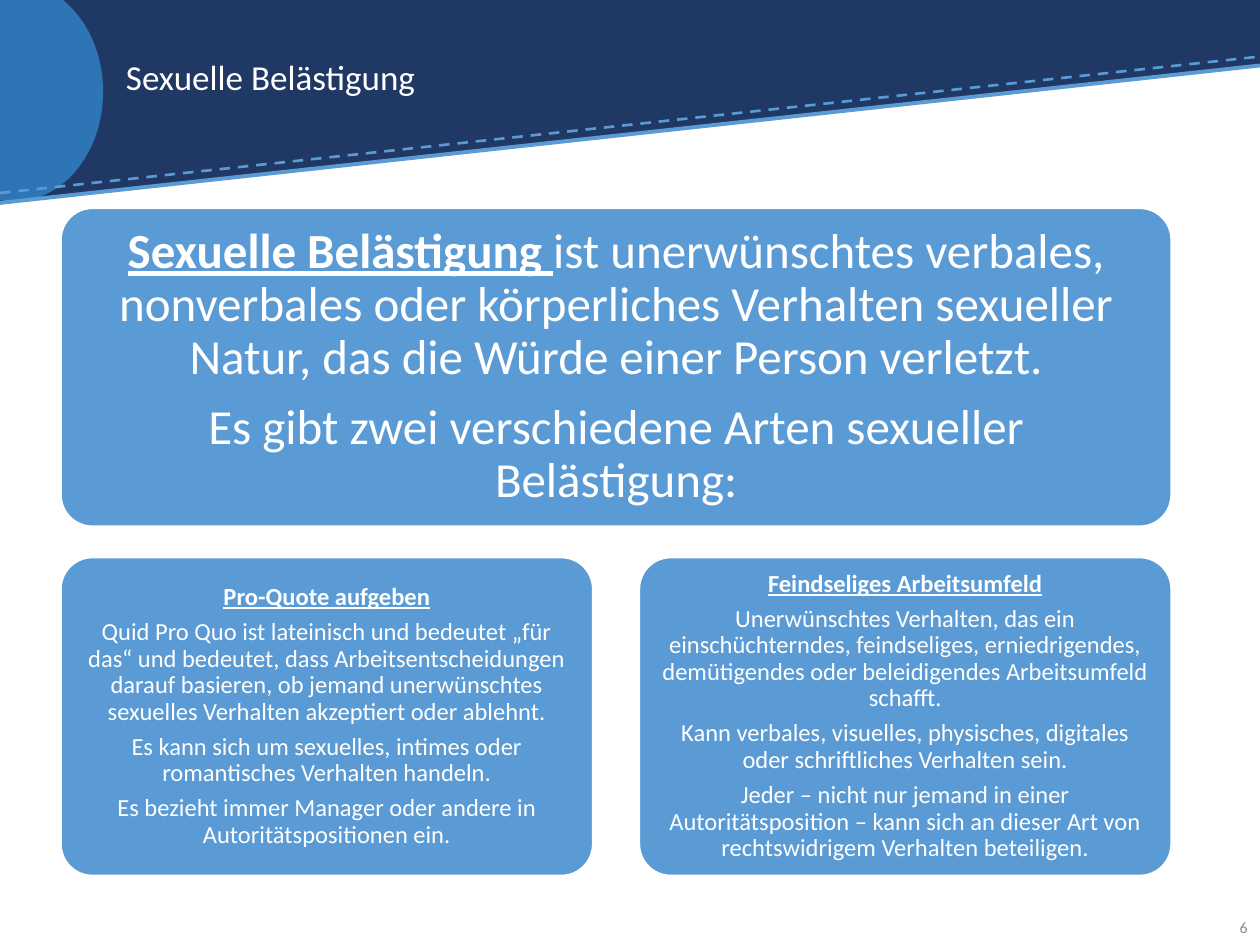
"""Build the slide on the two kinds of sexual harassment."""
from lxml import etree
from pptx import Presentation
from pptx.dml.color import RGBColor
from pptx.enum.dml import MSO_LINE
from pptx.enum.shapes import MSO_CONNECTOR, MSO_SHAPE
from pptx.enum.text import MSO_ANCHOR, PP_ALIGN
from pptx.oxml.ns import qn
from pptx.util import Cm, Pt

RECT, TRIANGLE = MSO_SHAPE.RECTANGLE, MSO_SHAPE.RIGHT_TRIANGLE
OVAL, ROUND = MSO_SHAPE.OVAL, MSO_SHAPE.ROUNDED_RECTANGLE
STRAIGHT, DASH = MSO_CONNECTOR.STRAIGHT, MSO_LINE.DASH
MIDDLE = MSO_ANCHOR.MIDDLE
LEFT, CENTER, RIGHT = PP_ALIGN.LEFT, PP_ALIGN.CENTER, PP_ALIGN.RIGHT

NAVY = RGBColor(0x20, 0x38, 0x64)
BLUE = RGBColor(0x2E, 0x75, 0xB6)
LIGHT = RGBColor(0x5B, 0x9B, 0xD5)
GREY = RGBColor(0x8C, 0x8C, 0x8C)
WHITE = RGBColor(0xFF, 0xFF, 0xFF)

TITLE = "Sexuelle Belästigung"
PAGE = "6"
HEAD = {"bold": True, "underline": True}
PLAIN = {"bold": False, "underline": False}
DEFINITION = [
    [("Sexuelle Belästigung ", HEAD),
     ("ist unerwünschtes verbales, nonverbales oder körperliches Verhalten "
      "sexueller Natur, das die Würde einer Person verletzt.", PLAIN)],
    [("Es gibt zwei verschiedene Arten sexueller Belästigung:", PLAIN)],
]
KINDS = [
    [[("Pro-Quote aufgeben", HEAD)],
     [("Quid Pro Quo ist lateinisch und bedeutet „für das“ und bedeutet, dass "
       "Arbeitsentscheidungen darauf basieren, ob jemand unerwünschtes sexuelles "
       "Verhalten akzeptiert oder ablehnt.", PLAIN)],
     [("Es kann sich um sexuelles, intimes oder romantisches Verhalten handeln.", PLAIN)],
     [("Es bezieht immer Manager oder andere in Autoritätspositionen ein.", PLAIN)]],
    [[("Feindseliges Arbeitsumfeld", HEAD)],
     [("Unerwünschtes Verhalten, das ein einschüchterndes, feindseliges, "
       "erniedrigendes, demütigendes oder beleidigendes Arbeitsumfeld schafft.", PLAIN)],
     [("Kann verbales, visuelles, physisches, digitales oder schriftliches "
       "Verhalten sein.", PLAIN)],
     [("Jeder – nicht nur jemand in einer Autoritätsposition – kann sich an dieser "
       "Art von rechtswidrigem Verhalten beteiligen.", PLAIN)]],
]

WIDTH, HEIGHT = 25.4, 19.05
BAND = [
    (RECT, (0, 0, WIDTH, 1.32), NAVY),
    (TRIANGLE, (0, 1.3, WIDTH, 2.77), NAVY),
    (OVAL, (-1.5, -0.36, 3.58, 4.42), BLUE),
]
EDGES = [(3.89, 1.14, {"width": Pt(1.5), "dash_style": DASH}),
         (4.09, 1.32, {"width": Pt(2.25)})]
CARD_LEFT, CARD_WIDTH, CARD_HEIGHT = 1.22, 22.4, 6.43
TOP_ROW, KIND_ROW, GAP = 4.19, 11.23, 0.92


def apply(obj, values):
    for name, value in values.items():
        setattr(obj, name, value)


def add_filled(slide, kind, box, color):
    sp = slide.shapes.add_shape(kind, *map(Cm, box))
    sp.shadow.inherit = False
    sp.fill.solid()
    sp.fill.fore_color.rgb = color
    sp.line.fill.background()
    return sp


def write(sp, paragraphs, size, color, align, spacing=0.9, after=0, inset=None):
    tf = sp.text_frame
    apply(tf, {"word_wrap": True, "vertical_anchor": MIDDLE})
    if inset is not None:
        sides = ("margin_left", "margin_top", "margin_right", "margin_bottom")
        apply(tf, dict.fromkeys(sides, Cm(inset)))
    for i, runs in enumerate(paragraphs):
        p = tf.add_paragraph() if i else tf.paragraphs[0]
        apply(p, {"alignment": align, "line_spacing": spacing, "space_after": Pt(after)})
        for text, style in runs:
            r = p.add_run()
            r.text = text
            apply(r.font, {"name": "Calibri", "size": Pt(size), **style})
            r.font.color.rgb = color


def add_label(slide, box, text, size, color, align):
    sp = slide.shapes.add_textbox(*map(Cm, box))
    write(sp, [[(text, PLAIN)]], size, color, align)


def add_card(slide, box, paragraphs, size, inset):
    sp = add_filled(slide, ROUND, box, LIGHT)
    sp.adjustments[0] = 0.1
    sp.line.color.rgb = WHITE
    sp.line.width = Pt(1.5)
    write(sp, paragraphs, size, WHITE, CENTER, after=0.35 * size, inset=inset)


def add_edge(slide, start, end, style):
    s = slide.shapes.add_connector(STRAIGHT, 0, Cm(start), Cm(WIDTH), Cm(end))
    s.line.color.rgb = LIGHT
    apply(s.line, style)
    etree.SubElement(s._element.spPr, qn("a:effectLst"))


def main():
    prs = Presentation()
    apply(prs, {"slide_width": Cm(WIDTH), "slide_height": Cm(HEIGHT)})
    slide = prs.slides.add_slide(prs.slide_layouts[6])
    for kind, box, color in BAND:
        sp = add_filled(slide, kind, box, color)
        if kind == TRIANGLE:
            sp._element.spPr.find(qn("a:xfrm")).set("flipV", "1")
    for edge in EDGES:
        add_edge(slide, *edge)
    add_label(slide, (2.29, 0.51, 20.45, 2.18), TITLE, 20, WHITE, LEFT)
    add_label(slide, (24.05, 18.21, 1.35, 1.02), PAGE, 9, GREY, RIGHT)
    add_card(slide, (CARD_LEFT, TOP_ROW, CARD_WIDTH, CARD_HEIGHT), DEFINITION, 28, 0.3)
    width = (CARD_WIDTH - GAP) / len(KINDS)
    for i, kind in enumerate(KINDS):
        left = CARD_LEFT + i * (width + GAP)
        add_card(slide, (left, KIND_ROW, width, CARD_HEIGHT), kind, 14, 0.15)
    prs.save("out.pptx")


if __name__ == "__main__":
    main()
